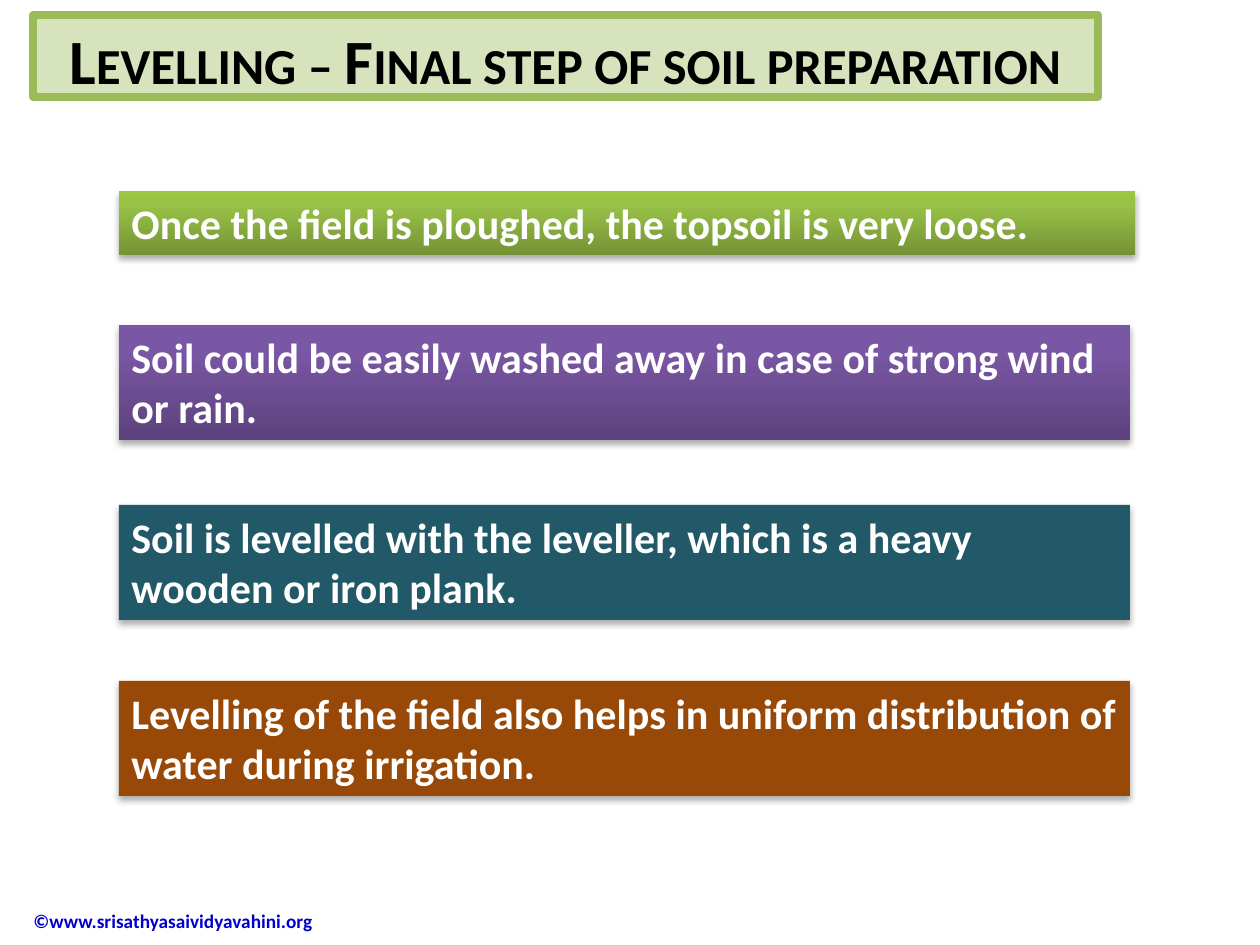
from lxml import etree
from pptx import Presentation
from pptx.dml.color import RGBColor
from pptx.enum.shapes import MSO_SHAPE
from pptx.enum.text import MSO_ANCHOR, MSO_AUTO_SIZE, PP_ALIGN
from pptx.oxml.ns import qn
from pptx.util import Emu, Pt

RECTANGLE = MSO_SHAPE.RECTANGLE
TOP, MIDDLE = MSO_ANCHOR.TOP, MSO_ANCHOR.MIDDLE
LEFT, CENTER = PP_ALIGN.LEFT, PP_ALIGN.CENTER
FIXED, GROW = MSO_AUTO_SIZE.NONE, MSO_AUTO_SIZE.SHAPE_TO_FIT_TEXT
PX_PER_INCH = 126
TITLE_ONLY = 5


def px(length):
    return Emu(round(length * 914400 / PX_PER_INCH))


def rgb(value):
    return RGBColor.from_string(value)


def add_element(parent, tag, **attributes):
    return etree.SubElement(parent, qn(tag), attributes)


class SlideBuilder:
    """Holds the shared style and the current slide."""

    font_name = "Calibri"

    def __init__(self, slide):
        self.slide = slide

    def set_text(self, shape, text, size, color, align=LEFT, anchor=TOP, fit=FIXED):
        frame = shape.text_frame
        frame.word_wrap = True
        frame.auto_size = fit
        frame.vertical_anchor = anchor
        frame.text = text
        paragraph = frame.paragraphs[0]
        paragraph.alignment = align
        font = paragraph.font
        font.name, font.size, font.bold = self.font_name, Pt(size), True
        font.color.rgb = rgb(color)
        return paragraph._p.get_or_add_pPr()

    def title(self, text, left, top, width, height):
        heading = self.slide.shapes.title
        heading.left, heading.top = px(left), px(top)
        heading.width, heading.height = px(width), px(height)
        heading.fill.solid()
        heading.fill.fore_color.rgb = rgb("D6E3BC")
        heading.line.color.rgb = rgb("9BBB59")
        heading.line.width = Pt(4.5)
        add_element(heading._element.spPr.find(qn("a:ln")), "a:round")
        properties = self.set_text(heading, text, 36, "000000", CENTER)
        properties.find(qn("a:defRPr")).set("cap", "small")

    def statement(self, text, colors, left, top, width, height):
        box = self.slide.shapes.add_shape(
            RECTANGLE, px(left), px(top), px(width), px(height))
        box.line.fill.background()
        self.paint(box, colors)
        self.drop_shadow(box)
        self.set_text(box, text, 24, "FFFFFF", fit=GROW)

    def paint(self, box, colors):
        if len(colors) == 1:
            box.fill.solid()
            box.fill.fore_color.rgb = rgb(colors[0])
            return
        box.fill.gradient()
        box.fill.gradient_angle = 90
        stops = box._element.spPr.find(qn("a:gradFill")).find(qn("a:gsLst"))
        stops.clear()
        for percent, color in zip((0, 80, 100), colors):
            stop = add_element(stops, "a:gs", pos=str(percent * 1000))
            add_element(stop, "a:srgbClr", val=color)

    def drop_shadow(self, box):
        box.shadow.inherit = False
        effects = box._element.spPr.find(qn("a:effectLst"))
        shadow = add_element(
            effects, "a:outerShdw", blurRad=str(Pt(3.5)), dist=str(Pt(2.2)),
            dir="5400000", algn="ctr", rotWithShape="0")
        shade = add_element(shadow, "a:srgbClr", val="000000")
        add_element(shade, "a:alpha", val="32000")

    def copyright(self, text, left, top, width, height):
        notice = self.slide.shapes.add_textbox(
            px(left), px(top), px(width), px(height))
        properties = self.set_text(notice, text, 11, "0000CC", anchor=MIDDLE)
        properties.set("marL", str(px(63)))
        properties.set("indent", "0")


def main():
    presentation = Presentation()
    presentation.slide_width, presentation.slide_height = px(1260), px(945)
    slide = presentation.slides.add_slide(presentation.slide_layouts[TITLE_ONLY])
    builder = SlideBuilder(slide)

    builder.copyright("©www.srisathyasaividyavahini.org", -42, 895, 381, 52)
    builder.title("Levelling – Final step of soil preparation", 33, 15, 1065, 82)

    statements = [
        ("Once the field is ploughed, the topsoil is very loose.",
         ("759336", "99C247", "9BC545"), 191, 1016, 64),
        ("Soil could be easily washed away in case of strong wind or rain.",
         ("5D427D", "7A57A5", "7A56A7"), 325, 1011, 115),
        ("Soil is levelled with the leveller, which is a heavy wooden or iron plank.",
         ("215968",), 505, 1011, 115),
        ("Levelling of the field also helps in uniform distribution of water "
         "during irrigation.", ("984807",), 681, 1011, 115),
    ]
    for text, colors, top, width, height in statements:
        builder.statement(text, colors, 119, top, width, height)

    presentation.save("out.pptx")


if __name__ == "__main__":
    main()
